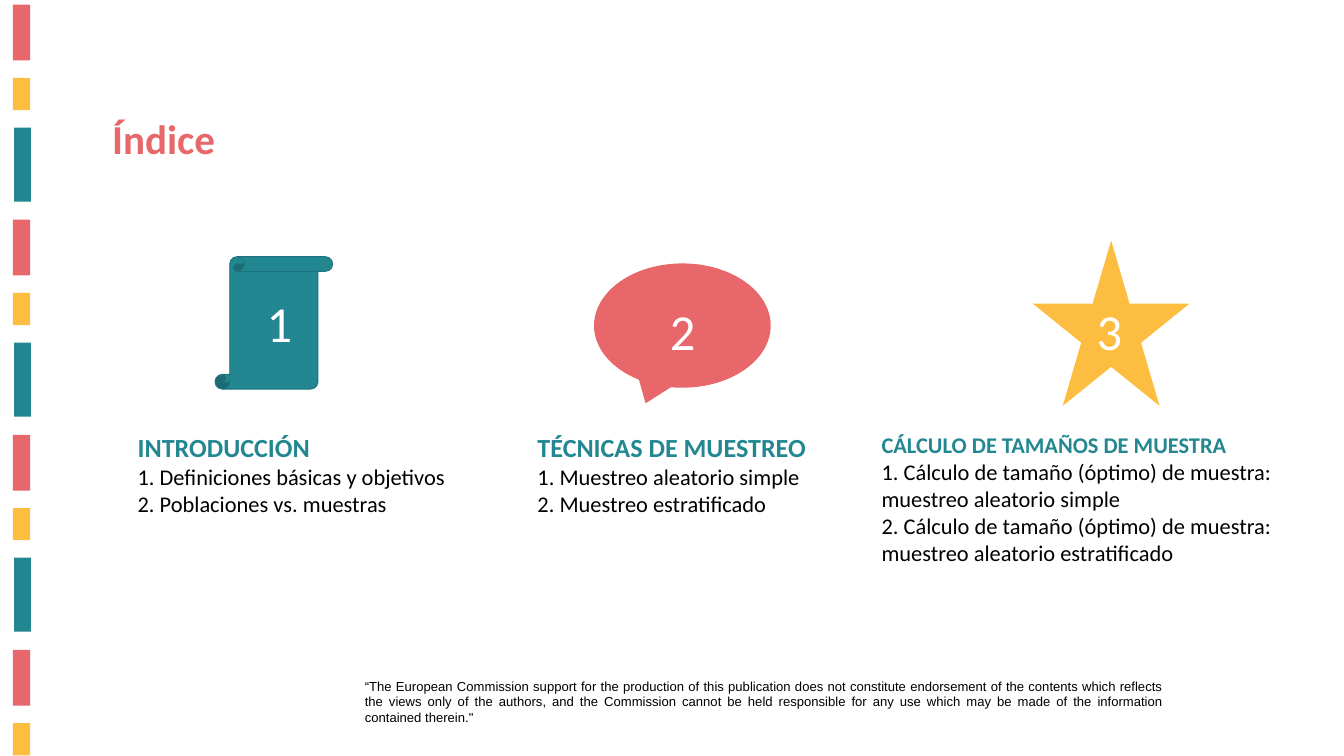
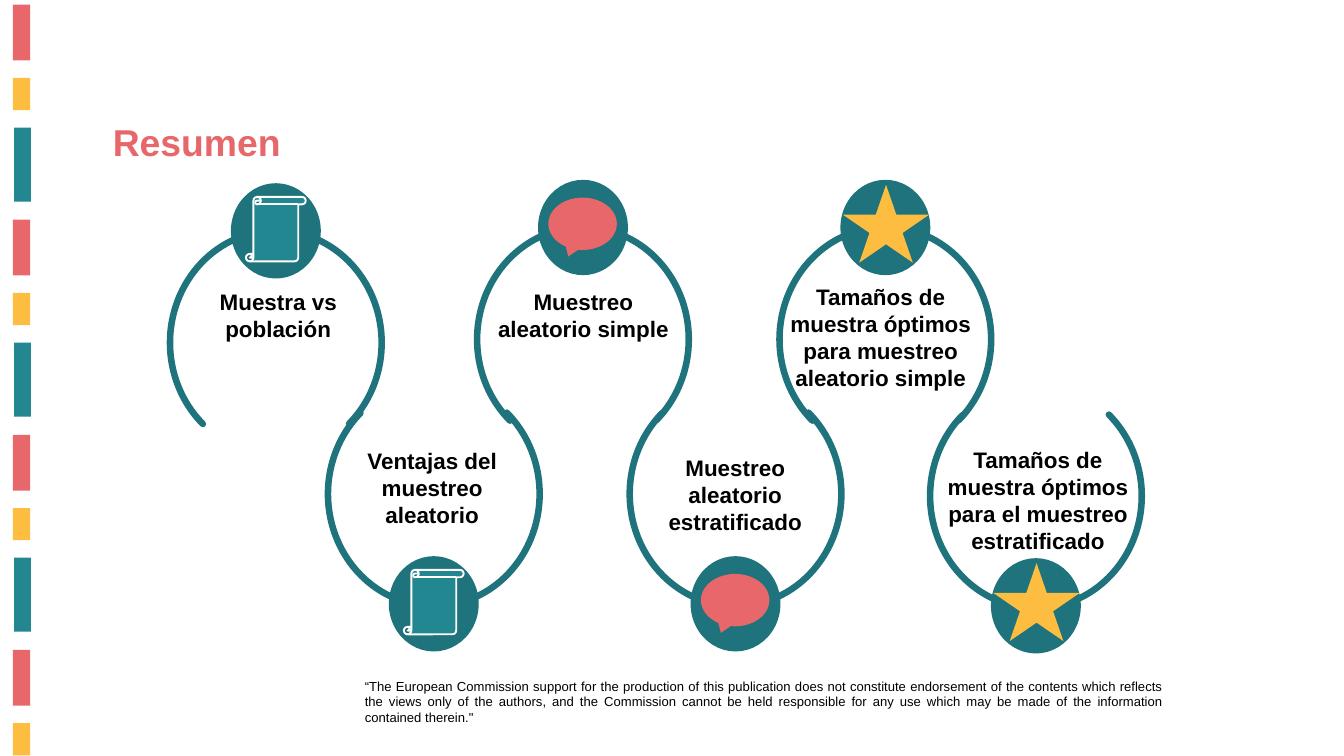
from dataclasses import dataclass

from pptx import Presentation
from pptx.dml.color import RGBColor
from pptx.enum.shapes import MSO_SHAPE as SHAPE
from pptx.enum.text import PP_ALIGN as ALIGN
from pptx.oxml.ns import qn
from pptx.util import Inches, Pt


@dataclass(frozen=True)
class Theme:
    coral: str = "E8676A"
    title: str = "E7686A"
    amber: str = "FDBD40"
    teal: str = "238791"
    deep_teal: str = "1E737C"
    black: str = "000000"
    white: str = "FFFFFF"
    sans: str = "Calibri"
    plain: str = "Arial"
    index_title: int = 44
    summary_title: int = 40
    number: int = 54
    heading: int = 28
    body: int = 24
    notice: int = 14


THEME = Theme()

# Side band: left, top, width, height, colour; repeated down the page
STRIPES = [
    (0.19, 0.07, 0.26, 0.83, THEME.coral),
    (0.19, 1.16, 0.26, 0.48, THEME.amber),
    (0.21, 1.9, 0.25, 1.1, THEME.teal),
]
STRIPE_PERIOD = 3.2
PAGE_HEIGHT = 11.25

NOTICE = (
    "“The European Commission support for the production of this publication "
    "does not constitute endorsement of the contents which reflects the views "
    "only of the authors, and the Commission cannot be held responsible for any "
    "use which may be made of the information contained therein.\""
)

ICONS = {
    "scroll": (SHAPE.VERTICAL_SCROLL, THEME.teal),
    "callout": (SHAPE.OVAL_CALLOUT, THEME.coral),
    "star": (SHAPE.STAR_5_POINT, THEME.amber),
}

SECTIONS = [
    {
        "icon": "scroll", "icon_at": (3.2, 3.82, 1.75, 1.97), "line": (THEME.deep_teal, 1),
        "number_at": (3.87, 4.3, 1.58, 1.01), "text_at": (1.95, 6.37, 5.09, 2.09),
        "heading": "INTRODUCCIÓN", "heading_size": THEME.heading,
        "topics": ["1. Definiciones básicas y objetivos", "2. Poblaciones vs. muestras"],
    },
    {
        "icon": "callout", "icon_at": (8.84, 3.92, 2.63, 1.85), "line": None,
        "number_at": (9.87, 4.41, 1.08, 1.01), "text_at": (7.9, 6.37, 4.55, 2.09),
        "heading": "TÉCNICAS DE MUESTREO", "heading_size": THEME.heading,
        "topics": ["1. Muestreo aleatorio simple", "2. Muestreo estratificado"],
    },
    {
        "icon": "star", "icon_at": (15.37, 3.58, 2.33, 2.46), "line": None,
        "number_at": (16.22, 4.41, 1.5, 1.01), "text_at": (13.02, 6.37, 6.54, 2.52),
        "heading": "CÁLCULO DE TAMAÑOS DE MUESTRA", "heading_size": THEME.body,
        "topics": [
            "1. Cálculo de tamaño (óptimo) de muestra: muestreo aleatorio simple",
            "2. Cálculo de tamaño (óptimo) de muestra: muestreo aleatorio estratificado",
        ],
    },
]

# Summary stops: loop left, loop top, opens upward, icon, caption, caption place
STOPS = [
    (2.53, 3.43, False, "scroll", "Muestra vs población", (2.69, 4.24, 2.9, 0.91)),
    (4.88, 5.68, True, "scroll", "Ventajas del muestreo aleatorio", (4.89, 6.61, 3.08, 1.31)),
    (7.1, 3.38, False, "callout", "Muestreo aleatorio simple", (7.14, 4.24, 3.08, 1.31)),
    (9.37, 5.68, True, "callout", "Muestreo aleatorio estratificado", (9.49, 6.71, 2.9, 1.72)),
    (11.6, 3.38, False, "star", "Tamaños de muestra óptimos para muestreo aleatorio simple",
     (11.56, 4.17, 3.09, 1.72)),
    (13.84, 5.71, True, "star", "Tamaños de muestra óptimos para el muestreo estratificado",
     (13.9, 6.59, 3.09, 1.31)),
]
LOOP_SIZE = (3.15, 3.34)
LOOP_ANGLES = (79.141, 28.684)
BADGE_SIZE = (1.31, 1.39)
BADGE_LEFT = 0.92
BADGE_TOP = {False: -0.69, True: 2.61}
# Offset from the badge, size, outline
BADGE_ICONS = {
    "scroll": (0.21, 0.19, 0.89, 0.96, (THEME.white, 2)),
    "callout": (0.14, 0.25, 1.02, 0.78, None),
    "star": (0.02, 0.06, 1.29, 1.16, None),
}


def color(code):
    return RGBColor.from_string(code)


def add_figure(page, kind, place, fill=None, line=None):
    """Add a preset shape; line is a (colour, points) pair."""
    figure = page.shapes.add_shape(kind, *map(Inches, place))
    figure.shadow.inherit = False
    if fill:
        figure.fill.solid()
        figure.fill.fore_color.rgb = color(fill)
    else:
        figure.fill.background()
    if line:
        figure.line.color.rgb = color(line[0])
        figure.line.width = Pt(line[1])
    else:
        figure.line.fill.background()
    return figure


def add_text(page, place, lines, font, align=ALIGN.LEFT):
    """Add one paragraph for each (text, size, colour, bold) line."""
    box = page.shapes.add_textbox(*map(Inches, place))
    frame = box.text_frame
    frame.word_wrap = True
    for index, (text, size, ink, bold) in enumerate(lines):
        para = frame.add_paragraph() if index else frame.paragraphs[0]
        para.alignment = align
        span = para.add_run()
        span.text = text
        span.font.name = font
        span.font.size = Pt(size)
        span.font.bold = bold
        span.font.color.rgb = color(ink)
    return box


def furnish_layout(layout, page):
    """Draw the side band and notice, then move them to the shared layout."""
    for placeholder in list(layout.placeholders):
        layout.shapes.element.remove(placeholder.element)
    parts = []
    for left, first_top, width, height, fill in STRIPES:
        top = first_top
        while top < PAGE_HEIGHT:
            parts.append(add_figure(page, SHAPE.RECTANGLE, (left, top, width, height), fill))
            top += STRIPE_PERIOD
    parts.append(add_text(page, (5.33, 10.04, 12.08, 0.81),
                          [(NOTICE, THEME.notice, THEME.black, False)],
                          THEME.plain, ALIGN.JUSTIFY))
    for part in parts:
        layout.shapes.element.append(part.element)


def build_index(page):
    add_text(page, (1.57, 1.64, 6.77, 1.58),
             [("Índice", THEME.index_title, THEME.title, True)], THEME.sans)
    for number, section in enumerate(SECTIONS, 1):
        kind, fill = ICONS[section["icon"]]
        add_figure(page, kind, section["icon_at"], fill, section["line"])
        add_text(page, section["number_at"],
                 [(str(number), THEME.number, THEME.white, False)], THEME.sans)
        lines = [(section["heading"], section["heading_size"], THEME.teal, True)]
        lines += [(topic, THEME.body, THEME.black, False) for topic in section["topics"]]
        add_text(page, section["text_at"], lines, THEME.sans)


def add_loop(page, left, top, opens_up):
    loop = add_figure(page, SHAPE.ARC, (left, top, *LOOP_SIZE), line=(THEME.deep_teal, 7))
    for index, angle in enumerate(LOOP_ANGLES):
        loop.adjustments[index] = angle
    loop.rotation = 180 if opens_up else 0
    loop.element.spPr.find(qn("a:ln")).set("cap", "rnd")


def add_badge(page, left, top, icon):
    add_figure(page, SHAPE.OVAL, (left, top, *BADGE_SIZE), THEME.deep_teal, (THEME.deep_teal, 2))
    kind, fill = ICONS[icon]
    across, down, width, height, line = BADGE_ICONS[icon]
    add_figure(page, kind, (left + across, top + down, width, height), fill, line)


def build_summary(page):
    add_text(page, (1.58, 1.72, 6.58, 0.77),
             [("Resumen", THEME.summary_title, THEME.title, True)], THEME.plain)
    for left, top, opens_up, *_ in STOPS:
        add_loop(page, left, top, opens_up)
    for left, top, opens_up, icon, caption, caption_at in STOPS:
        add_badge(page, left + BADGE_LEFT, top + BADGE_TOP[opens_up], icon)
        add_text(page, caption_at, [(caption, THEME.body, THEME.black, True)],
                 THEME.plain, ALIGN.CENTER)


def main():
    deck = Presentation()
    deck.slide_width, deck.slide_height = Inches(20), Inches(PAGE_HEIGHT)
    blank = deck.slide_layouts[6]
    index, summary = (deck.slides.add_slide(blank) for _ in range(2))
    furnish_layout(blank, index)
    build_index(index)
    build_summary(summary)
    deck.save("out.pptx")


if __name__ == "__main__":
    main()
